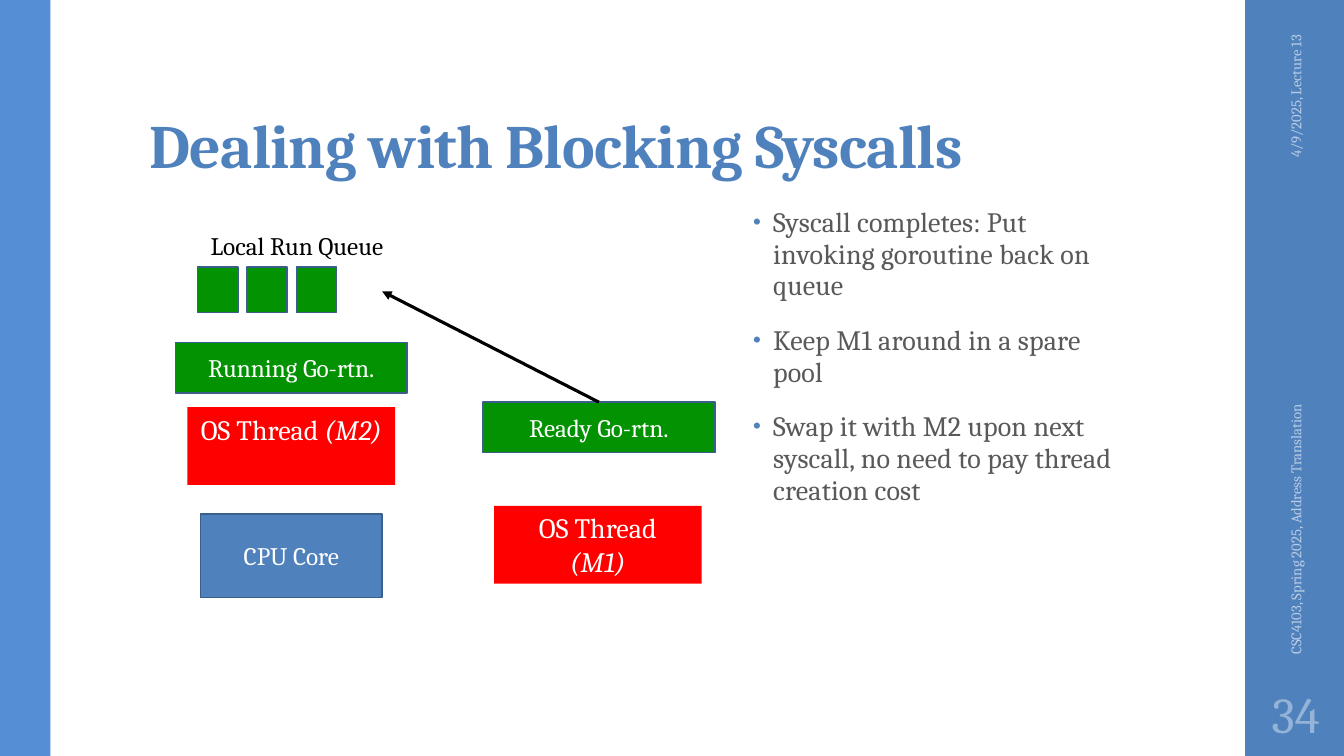
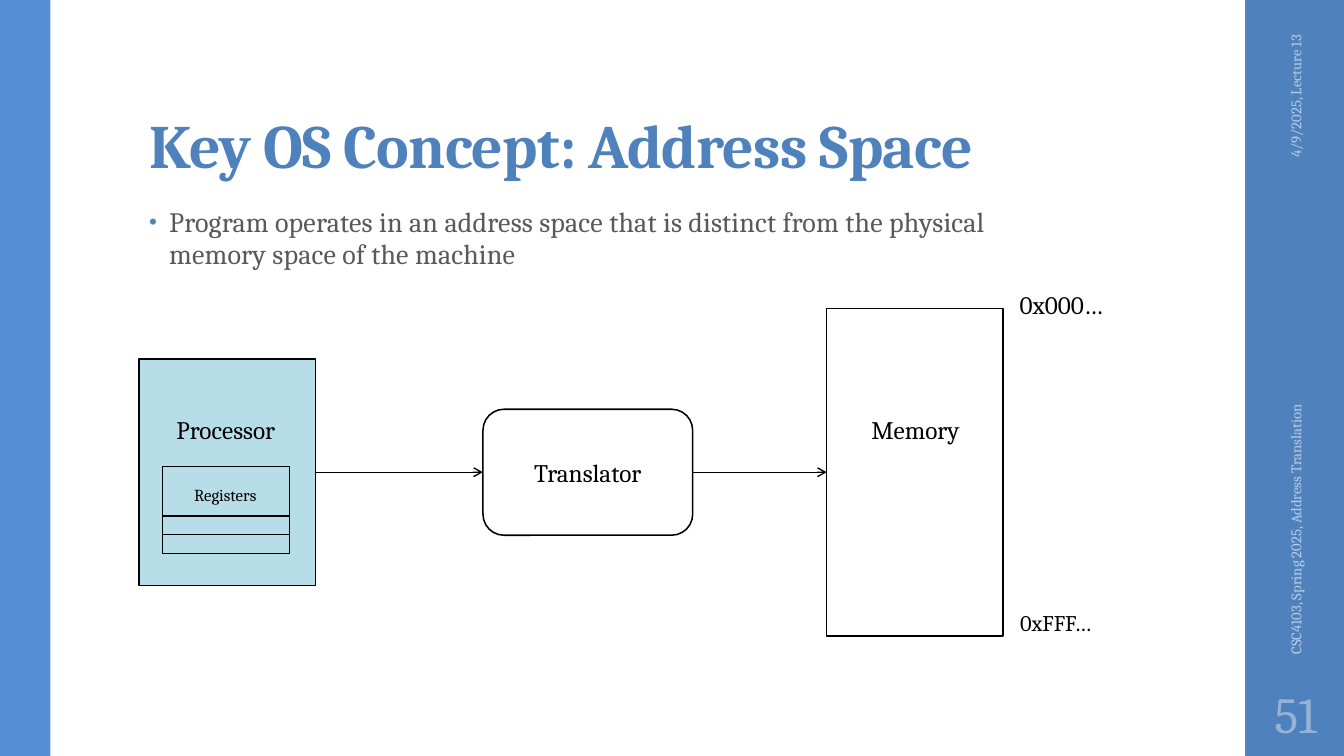
import pptx
import pptx.dml.color
import pptx.enum.shapes
import pptx.enum.text
import pptx.oxml
import pptx.oxml.ns
import pptx.util
from pptx.util import Inches

FONT = "Cambria"
BLUE, LEFT_BLUE, EDGE = "4F81BD", "558ED5", "3A5F8C"
DATE_BLUE, NUMBER_BLUE, BODY_GREY = "B9CDE5", "95B3D7", "595959"
GREEN, RED, CYAN, WHITE, BLACK = "039202", "FF0000", "B7DEE8", "FFFFFF", "000000"

ALIGN = pptx.enum.text.PP_ALIGN
ANCHOR = pptx.enum.text.MSO_ANCHOR
SHAPE = pptx.enum.shapes.MSO_SHAPE


def color(value):
    """Turn a hex string into a colour."""
    return pptx.dml.color.RGBColor.from_string(value)


def add_xml(parent, markup):
    """Append one DrawingML element to parent and return it."""
    declaration = pptx.oxml.ns.nsdecls("a")
    element = pptx.oxml.parse_xml(markup.replace("/>", f" {declaration}/>", 1))
    parent.append(element)
    return element


def format_runs(paragraph, size, ink, bold=False, spacing=None):
    """Give every run of a paragraph the same typeface and colour."""
    for run in paragraph.runs:
        run.font.name = FONT
        run.font.size = pptx.util.Pt(size)
        run.font.color.rgb = color(ink)
        run.font.bold = bold
        if spacing:
            run._r.get_or_add_rPr().set("spc", str(spacing))


def set_margins(frame, left, top, right, bottom):
    """Set the four text insets in inches."""
    frame.margin_left, frame.margin_top = Inches(left), Inches(top)
    frame.margin_right, frame.margin_bottom = Inches(right), Inches(bottom)


def write(shape, text, size, ink, align=ALIGN.CENTER, anchor=ANCHOR.MIDDLE,
          wrap=True, emphasis=""):
    """Write one paragraph, with an optional italic ending."""
    frame = shape.text_frame
    frame.word_wrap = wrap
    frame.vertical_anchor = anchor
    paragraph = frame.paragraphs[0]
    paragraph.text = text
    paragraph.alignment = align
    if emphasis:
        ending = paragraph.add_run()
        ending.text = emphasis
        ending.font.italic = True
    format_runs(paragraph, size, ink)


def add_box(slide, left, top, width, height, fill=None, line=None, weight=1.1,
            kind=SHAPE.RECTANGLE):
    """Add a flat shape with optional fill and outline."""
    box = slide.shapes.add_shape(
        kind, Inches(left), Inches(top), Inches(width), Inches(height))
    box.shadow.inherit = False
    if fill:
        box.fill.solid()
        box.fill.fore_color.rgb = color(fill)
    else:
        box.fill.background()
    if line:
        box.line.color.rgb = color(line)
        box.line.width = pptx.util.Pt(weight)
    else:
        box.line.fill.background()
    return box


def add_label(slide, left, top, width, height, text, size=18, ink=BLACK, **style):
    """Add a text box holding one paragraph."""
    label = slide.shapes.add_textbox(
        Inches(left), Inches(top), Inches(width), Inches(height))
    write(label, text, size, ink, **style)
    return label


def add_bullets(slide, width, items, left):
    """Add the bulleted body text."""
    body = slide.shapes.add_textbox(
        Inches(left), Inches(2), Inches(width), Inches(4.76))
    frame = body.text_frame
    frame.word_wrap = True
    for index, item in enumerate(items):
        paragraph = frame.add_paragraph() if index else frame.paragraphs[0]
        paragraph.text = item
        paragraph.line_spacing = 0.95
        paragraph.space_before = pptx.util.Pt(14)
        paragraph.space_after = pptx.util.Pt(2)
        format_runs(paragraph, 20, BODY_GREY, spacing=10)
        properties = paragraph._p.get_or_add_pPr()
        properties.set("marL", str(Inches(0.2)))
        properties.set("indent", str(Inches(-0.2)))
        bullet_color = add_xml(properties, "<a:buClr/>")
        add_xml(bullet_color, f'<a:srgbClr val="{BLUE}"/>')
        add_xml(properties, '<a:buSzPct val="80000"/>')
        add_xml(properties, '<a:buFont typeface="Arial"/>')
        add_xml(properties, '<a:buChar char="•"/>')


def add_arrow(slide, source, source_side, target, weight, head):
    """Draw an arrow from a shape's side to a shape's left side or a point."""
    is_point = isinstance(target, tuple)
    end = [Inches(value) for value in target] if is_point else (0, 0)
    arrow = slide.shapes.add_connector(
        pptx.enum.shapes.MSO_CONNECTOR.STRAIGHT, 0, 0, *end)
    arrow.begin_connect(source, source_side)
    if not is_point:
        arrow.end_connect(target, 1)
    arrow.line.color.rgb = color(BLACK)
    arrow.line.width = pptx.util.Pt(weight)
    add_xml(arrow.line._get_or_add_ln(), f'<a:tailEnd type="{head}"/>')
    add_xml(arrow._element.spPr, "<a:effectLst/>")


def add_slide(deck, heading, number):
    """Add a slide with its bands, title, footers and number."""
    slide = deck.slides.add_slide(deck.slide_layouts[5])
    add_box(slide, 12.35, 0, 1, 7.5, BLUE)
    add_box(slide, 0, 0, 0.5, 7.5, LEFT_BLUE)

    title = slide.shapes.title
    title.left, title.top = Inches(1.38), Inches(0.32)
    title.width, title.height = Inches(10.6), Inches(1.53)
    write(title, heading, 44, BLUE, ALIGN.LEFT, ANCHOR.BOTTOM)
    title.text_frame.auto_size = pptx.enum.text.MSO_AUTO_SIZE.NONE
    set_margins(title.text_frame, 0.1, 0.03, 0.1, 0.05)
    paragraph = title.text_frame.paragraphs[0]
    paragraph.line_spacing = 0.9
    format_runs(paragraph, 44, BLUE, bold=True, spacing=-50)

    date = add_label(slide, 11.81, 1.09, 2.08, 0.4, "4/9/2025, Lecture 13",
                     10.5, DATE_BLUE, align=ALIGN.RIGHT)
    course = add_label(slide, 10.89, 4.43, 3.92, 0.4,
                       "CSC4103, Spring 2025, Address Translation",
                       10.5, DATE_BLUE, align=ALIGN.LEFT)
    date.rotation = course.rotation = 270
    page = add_label(slide, 12.35, 6.75, 1, 0.65, str(number), 36, NUMBER_BLUE)
    set_margins(page.text_frame, 0.05, 0.05, 0.05, 0.05)
    return slide


def add_thread(slide, left, top, text, emphasis):
    """Add a red operating system thread."""
    thread = add_box(slide, left, top, 2.06, 0.77, RED)
    write(thread, text, 20, WHITE, anchor=ANCHOR.TOP, emphasis=emphasis)


def add_routine(slide, left, top, text):
    """Add a green goroutine bar."""
    routine = add_box(slide, left, top, 2.3, 0.5, GREEN, EDGE)
    write(routine, text, 18, WHITE)
    return routine


def build_syscalls(deck):
    """Build the slide on blocking system calls."""
    slide = add_slide(deck, "Dealing with Blocking Syscalls", 34)
    add_bullets(slide, 3.85, [
        "Syscall completes: Put invoking goroutine back on queue",
        "Keep M1 around in a spare pool",
        "Swap it with M2 upon next syscall, no need to pay thread creation cost",
    ], left=7.37)
    core = add_box(slide, 1.99, 5.1, 1.8, 0.83, BLUE, EDGE)
    write(core, "CPU Core", 18, WHITE)
    add_thread(slide, 1.86, 4.04, "OS Thread ", "(M2)")
    add_thread(slide, 4.9, 5.02, "OS Thread\v", "(M1)")
    for position in range(3):
        add_box(slide, 1.96 + 0.49 * position, 2.65, 0.4, 0.45, GREEN, EDGE)
    add_label(slide, 1.79, 2.24, 2.31, 0.4, "Local Run Queue", anchor=ANCHOR.TOP)
    add_routine(slide, 1.74, 3.4, "Running Go-rtn.")
    ready = add_routine(slide, 4.79, 3.99, "Ready Go-rtn.")
    add_arrow(slide, ready, 0, (3.79, 2.89), 2.25, "triangle")


def build_address_space(deck):
    """Build the slide on address spaces."""
    slide = add_slide(deck, "Key OS Concept: Address Space", 51)
    add_bullets(slide, 9.4, [
        "Program operates in an address space that is distinct from the "
        "physical memory space of the machine",
    ], left=1.38)
    memory = add_box(slide, 8.2, 3.06, 1.75, 3.25, line=BLACK, weight=1)
    processor = add_box(slide, 1.38, 3.56, 1.75, 2.25, CYAN, BLACK, 1)
    translator = add_box(slide, 4.79, 4.06, 2.08, 1.25, WHITE, BLACK,
                         kind=SHAPE.FLOWCHART_ALTERNATE_PROCESS)
    write(translator, "Translator", 18, BLACK)
    for top, height in ((4.63, 0.86), (5.12, 0.18)):
        add_box(slide, 1.61, top, 1.26, height, line=BLACK, weight=1)
    for left, top, width, height, text, size in (
        (1.58, 4.06, 1.32, 0.4, "Processor", 18),
        (8.5, 4.06, 1.16, 0.4, "Memory", 18),
        (9.95, 2.82, 1.15, 0.4, "0x000…", 18),
        (9.91, 5.99, 1.12, 0.37, "0xFFF…", 16),
        (1.77, 4.76, 0.93, 0.3, "Registers", 12),
    ):
        add_label(slide, left, top, width, height, text, size,
                  anchor=ANCHOR.TOP, wrap=False)
    add_arrow(slide, processor, 3, translator, 1, "arrow")
    add_arrow(slide, translator, 3, memory, 1, "arrow")


def main():
    """Build and save the deck."""
    deck = pptx.Presentation()
    deck.slide_width, deck.slide_height = Inches(13.33), Inches(7.5)
    build_syscalls(deck)
    build_address_space(deck)
    deck.save("out.pptx")


if __name__ == "__main__":
    main()
